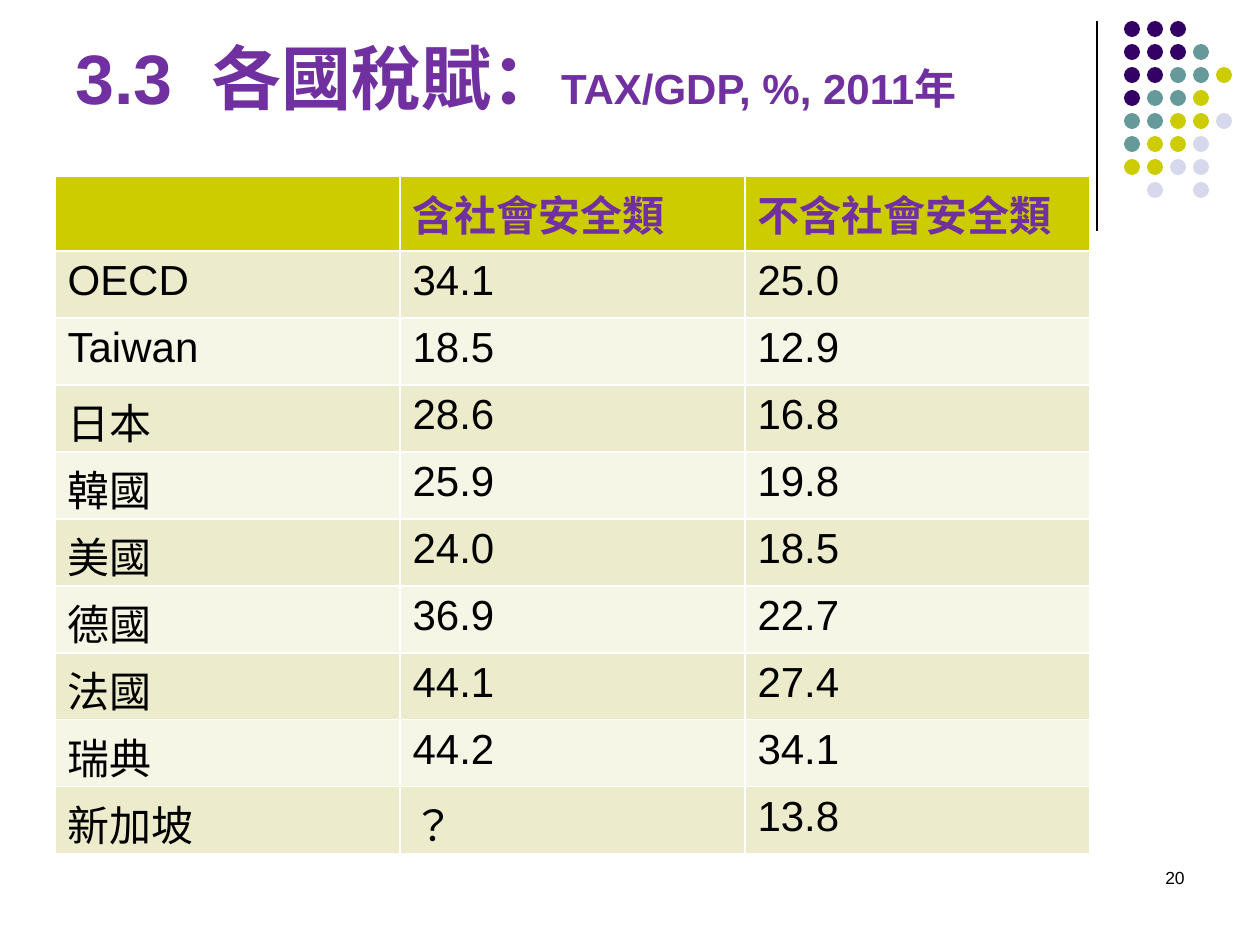
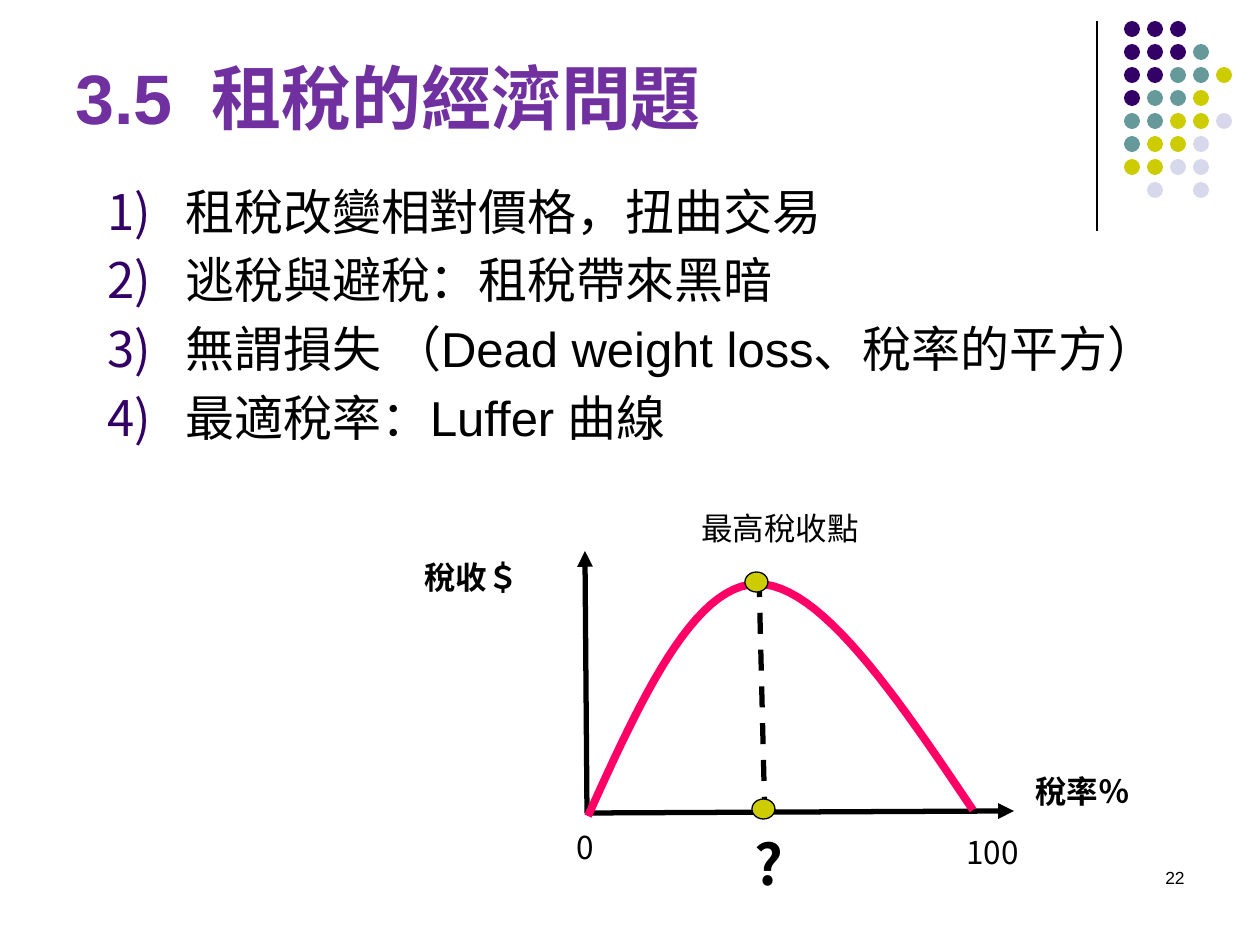
"""Build two slides on taxation: a table of tax burdens and the tax revenue curve."""
from lxml import etree
from pptx import Presentation, util as u
from pptx.dml.color import RGBColor
from pptx.enum import dml, shapes, text
from pptx.oxml.ns import qn

BLACK = RGBColor(0x00, 0x00, 0x00)
WHITE = RGBColor(0xFF, 0xFF, 0xFF)
PURPLE = RGBColor(0x70, 0x30, 0xA0)
INDIGO = RGBColor(0x33, 0x00, 0x66)
TEAL = RGBColor(0x66, 0x99, 0x99)
LIME = RGBColor(0xCC, 0xCC, 0x00)
MIST = RGBColor(0xD8, 0xD8, 0xEC)
SAND = RGBColor(0xEC, 0xEC, 0xCC)
CREAM = RGBColor(0xF6, 0xF6, 0xE7)
PINK = RGBColor(0xFF, 0x00, 0x66)
SANS, HAN = "Arial", "Noto Sans CJK TC"
PX = 914400 / 126


def px(*nums):
    return [u.Emu(round(n * PX)) for n in nums]


def write(para, words, size, color=BLACK, bold=False, face=SANS):
    run = para.add_run()
    run.text = words
    font = run.font
    font.name, font.size, font.bold = face, u.Pt(size), bold
    font.color.rgb = color
    etree.SubElement(font._element, qn("a:ea"), typeface=HAN)


deck = Presentation()
deck.slide_width, deck.slide_height = px(1260, 945)

DOTS = ["III", "IIIT", "IITTL", "ITTL", "TTLLM", "TLLM", "LLMM", " M M"]
HUES = {"I": INDIGO, "T": TEAL, "L": LIME, "M": MIST}
TITLES = [
    ((63, 16, 1043, 109), [("3.3  各國稅賦：", 40), ("TAX/GDP, %, 2011年", 24)], "20"),
    ((63, 16, 1023, 129), [("3.5  租稅的經濟問題", 40)], "22"),
]
pages = []
for place, parts, number in TITLES:
    page = deck.slides.add_slide(deck.slide_layouts[6])
    pages.append(page)
    rule = page.shapes.add_connector(shapes.MSO_CONNECTOR.STRAIGHT, *px(1097, 21, 1097, 231))
    rule.line.color.rgb, rule.line.width = BLACK, u.Pt(0.75)
    etree.SubElement(rule._element.spPr, qn("a:effectLst"))
    for row, marks in enumerate(DOTS):
        for col, mark in enumerate(marks):
            if mark in HUES:
                dot = page.shapes.add_shape(
                    shapes.MSO_SHAPE.OVAL, *px(1124 + 23 * col, 21 + 23 * row, 16, 16))
                dot.shadow.inherit = False
                dot.fill.solid()
                dot.fill.fore_color.rgb = HUES[mark]
                dot.line.fill.background()
    frame = page.shapes.add_textbox(*px(*place)).text_frame
    frame.word_wrap = True
    frame.vertical_anchor = text.MSO_ANCHOR.BOTTOM
    for words, size in parts:
        write(frame.paragraphs[0], words, size, PURPLE, True)
    foot = page.shapes.add_textbox(*px(903, 861, 294, 63)).text_frame
    foot.word_wrap = True
    foot.paragraphs[0].alignment = text.PP_ALIGN.RIGHT
    write(foot.paragraphs[0], number, 10)

RATES = [
    ("", "含社會安全類", "不含社會安全類"),
    ("OECD", "34.1", "25.0"),
    ("Taiwan", "18.5", "12.9"),
    ("日本", "28.6", "16.8"),
    ("韓國", "25.9", "19.8"),
    ("美國", "24.0", "18.5"),
    ("德國", "36.9", "22.7"),
    ("法國", "44.1", "27.4"),
    ("瑞典", "44.2", "34.1"),
    ("新加坡", "？", "13.8"),
]
grid = pages[0].shapes.add_table(len(RATES), 3, *px(55, 176, 1035, 676)).table
for col in grid.columns:
    col.width = px(345)[0]
for row, values in enumerate(RATES):
    head = row == 0
    grid.rows[row].height = px(75 if head else 67)[0]
    for col, value in enumerate(values):
        cell = grid.cell(row, col)
        if value:
            write(cell.text_frame.paragraphs[0], value, 24, PURPLE if head else BLACK, head)
        props = cell._tc.get_or_add_tcPr()
        for side in ("lnL", "lnR", "lnT", "lnB"):
            edge = etree.SubElement(props, qn(f"a:{side}"), w="12700")
            fill = etree.SubElement(edge, qn("a:solidFill"))
            etree.SubElement(fill, qn("a:srgbClr"), val=str(WHITE))
        cell.fill.solid()
        cell.fill.fore_color.rgb = LIME if head else SAND if row % 2 else CREAM

page = pages[1]
POINTS = [
    "租稅改變相對價格，扭曲交易",
    "逃稅與避稅：租稅帶來黑暗",
    "無謂損失 （Dead weight loss、稅率的平方）",
    "最適稅率：Luffer 曲線",
]
frame = page.shapes.add_textbox(*px(95, 175, 1091, 440)).text_frame
frame.word_wrap = True
for item, words in enumerate(POINTS):
    para = frame.add_paragraph() if item else frame.paragraphs[0]
    para.space_before = u.Pt(5.6)
    write(para, words, 28)
    props = para._p.get_or_add_pPr()
    props.set("marL", str(px(78)[0]))
    props.set("indent", str(px(-78)[0]))
    tint = etree.SubElement(props, qn("a:buClr"))
    etree.SubElement(tint, qn("a:srgbClr"), val=str(INDIGO))
    etree.SubElement(props, qn("a:buFont"), typeface=HAN)
    etree.SubElement(props, qn("a:buAutoNum"), type="arabicParenR")

AXES = [(587, 813, 585, 551), (587, 813, 1014, 811)]
DROP = (759, 576, 765, 822)
for ends in AXES + [DROP]:
    line = page.shapes.add_connector(shapes.MSO_CONNECTOR.STRAIGHT, *px(*ends))
    line.line.color.rgb, line.line.width = BLACK, u.Pt(3)
    if ends == DROP:
        line.line.dash_style = dml.MSO_LINE.DASH
    else:
        etree.SubElement(line.line._get_or_add_ln(), qn("a:tailEnd"), type="triangle")
    etree.SubElement(line._element.spPr, qn("a:effectLst"))

ARCS = [
    [(588, 816), (640, 701), (693, 585), (757, 584)],
    [(757, 584), (820, 583), (897, 697), (973, 810)],
]
STEPS = 24
trace = []
for arc in ARCS:
    for step in range(1, STEPS + 1):
        t = step / STEPS
        mix = [(1 - t) ** 3, 3 * t * (1 - t) ** 2, 3 * t * t * (1 - t), t ** 3]
        trace.append([sum(m * knot[axis] for m, knot in zip(mix, arc)) * PX for axis in (0, 1)])
start = px(*ARCS[0][0])
path = page.shapes.build_freeform(*start)
path.add_line_segments(trace, close=False)
curve = path.convert_to_shape()
curve.shadow.inherit = False
curve.fill.background()
curve.line.color.rgb, curve.line.width = PINK, u.Pt(4.5)

for left, top in [(745, 572), (752, 799)]:
    dot = page.shapes.add_shape(shapes.MSO_SHAPE.OVAL, *px(left, top, 23, 20))
    dot.shadow.inherit = False
    dot.fill.solid()
    dot.fill.fore_color.rgb = LIME
    dot.line.color.rgb, dot.line.width = BLACK, u.Pt(0.75)

LABELS = [
    ("稅率％", (1023, 766, 173, 72), 18, True),
    ("稅收＄", (412, 552, 173, 72), 18, True),
    ("0", (564, 822, 48, 72), 18, False),
    ("100", (954, 827, 95, 72), 18, False),
    ("?", (742, 823, 55, 79), 32, True),
    ("最高稅收點", (689, 503, 271, 72), 18, False),
]
for words, place, size, bold in LABELS:
    frame = page.shapes.add_textbox(*px(*place)).text_frame
    frame.word_wrap = True
    write(frame.paragraphs[0], words, size, bold=bold, face=HAN)

deck.save("out.pptx")
